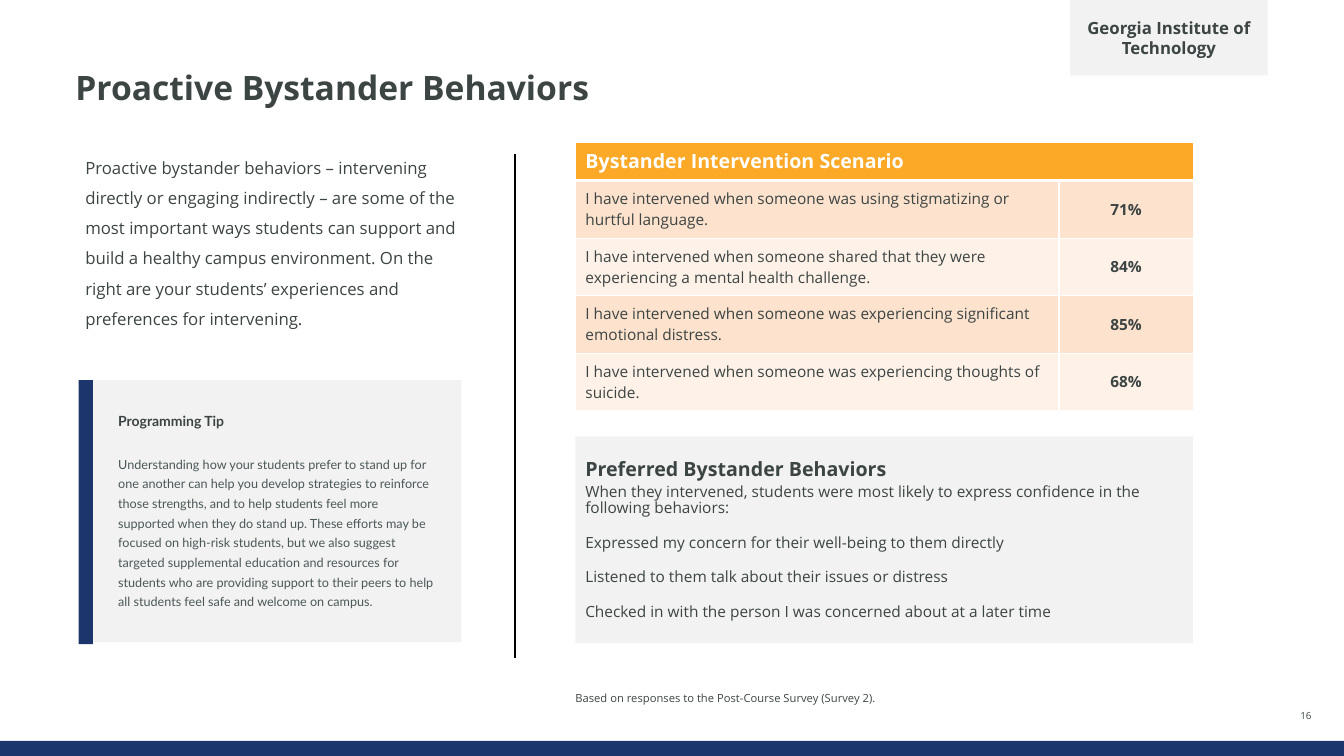
import pptx
import pptx.util
import pptx.dml.color
import pptx.enum.shapes
import pptx.enum.text
from lxml import etree

Cm, Pt = pptx.util.Cm, pptx.util.Pt
ALIGN, ANCHOR = pptx.enum.text.PP_ALIGN, pptx.enum.text.MSO_ANCHOR
COLORS = {"navy": "1C366B", "text": "3C4543", "muted": "4C5758", "panel": "F2F2F2",
          "header": "FBA927", "odd": "FDE2CD", "even": "FEF1E8",
          "white": "FFFFFF", "black": "000000"}
SCENARIOS = [
    ("I have intervened when someone was using stigmatizing or hurtful language.", "71%"),
    ("I have intervened when someone shared that they were experiencing a mental health challenge.", "84%"),
    ("I have intervened when someone was experiencing significant emotional distress.", "85%"),
    ("I have intervened when someone was experiencing thoughts of suicide.", "68%"),
]
BEHAVIORS = [
    "Expressed my concern for their well-being to them directly",
    "Listened to them talk about their issues or distress",
    "Checked in with the person I was concerned about at a later time",
]


def rgb(name):
    return pptx.dml.color.RGBColor.from_string(COLORS[name])


def set_frame(tf, anchor, left=0.25, top=0.0):
    tf.word_wrap = True
    tf.vertical_anchor = anchor
    tf.margin_left = tf.margin_right = Cm(left)
    tf.margin_top = tf.margin_bottom = Cm(top)


def write(p, text, size, color="text", bold=False, font="Open Sans",
          align=ALIGN.LEFT, line=None, before=0, after=0):
    p.text = text
    p.alignment = align
    p.space_before, p.space_after = Pt(before), Pt(after)
    if line:
        p.line_spacing = line
    f = p.runs[0].font
    f.name, f.size, f.bold = font, Pt(size), bold
    f.color.rgb = rgb(color)


def add_rect(s, x, y, w, h, color):
    sp = s.shapes.add_shape(pptx.enum.shapes.MSO_SHAPE.RECTANGLE, Cm(x), Cm(y), Cm(w), Cm(h))
    sp.shadow.inherit = False
    sp.fill.solid()
    sp.fill.fore_color.rgb = rgb(color)
    sp.line.fill.background()
    return sp


def add_text(s, x, y, w, h, text, size, anchor=ANCHOR.TOP, left=0.0, top=0.0, **style):
    tf = s.shapes.add_textbox(Cm(x), Cm(y), Cm(w), Cm(h)).text_frame
    set_frame(tf, anchor, left, top)
    write(tf.paragraphs[0], text, size, **style)


def add_divider(s, x, y, h):
    line = s.shapes.add_connector(pptx.enum.shapes.MSO_CONNECTOR.STRAIGHT,
                                  Cm(x), Cm(y), Cm(x), Cm(y + h))
    line.line.color.rgb = rgb("black")
    line.line.width = Pt(1)
    etree.SubElement(line._element.spPr, pptx.oxml.ns.qn("a:effectLst"))


def add_school_tag(s, x, y, w, h):
    tf = add_rect(s, x, y, w, h, "panel").text_frame
    set_frame(tf, ANCHOR.MIDDLE)
    write(tf.paragraphs[0], "Georgia Institute of Technology", 12, bold=True, align=ALIGN.CENTER)


def add_tip(s, x, y, w, h):
    bar = 0.36
    tf = add_rect(s, x + bar, y, w - bar, h - 0.05, "panel").text_frame
    set_frame(tf, ANCHOR.MIDDLE, 0.64)
    write(tf.paragraphs[0], "Programming Tip", 10, bold=True, font="Lato", line=Pt(12), after=2)
    write(tf.add_paragraph(),
          "Understanding how your students prefer to stand up for one another can help you "
          "develop strategies to reinforce those strengths, and to help students feel more "
          "supported when they do stand up. These efforts may be focused on high-risk students, "
          "but we also suggest targeted supplemental education and resources for students who "
          "are providing support to their peers to help all students feel safe and welcome on "
          "campus.", 9, "muted", font="Lato", line=1.3, before=14, after=2)
    add_rect(s, x, y, bar, h, "navy")


def add_behaviors(s, x, y, w, h):
    tf = add_rect(s, x, y, w, h, "panel").text_frame
    set_frame(tf, ANCHOR.MIDDLE, top=0.13)
    write(tf.paragraphs[0], "Preferred Bystander Behaviors", 14, bold=True, line=0.9, after=3)
    write(tf.add_paragraph(), "When they intervened, students were most likely to express "
          "confidence in the following behaviors:", 11, line=0.88)
    for behavior in BEHAVIORS:
        write(tf.add_paragraph(), behavior, 11, line=0.88, before=13)


def style_cell(cell, fill, bottom=1):
    # Borders come before the fill in the cell properties
    tc_pr = cell._tc.get_or_add_tcPr()
    for side, width in (("L", 1), ("R", 1), ("T", 1), ("B", bottom)):
        ln = etree.SubElement(tc_pr, pptx.oxml.ns.qn("a:ln" + side), w=str(Pt(width)))
        solid = etree.SubElement(ln, pptx.oxml.ns.qn("a:solidFill"))
        etree.SubElement(solid, pptx.oxml.ns.qn("a:srgbClr"), val=COLORS["white"])
    cell.fill.solid()
    cell.fill.fore_color.rgb = rgb(fill)
    cell.vertical_anchor = ANCHOR.MIDDLE


def add_scenarios(s, x, y, w, h):
    head, share = 0.97, 3.38
    rows = len(SCENARIOS) + 1
    table = s.shapes.add_table(rows, 2, Cm(x), Cm(y), Cm(w), Cm(h)).table
    table.columns[0].width, table.columns[1].width = Cm(w - share), Cm(share)
    for i, row in enumerate(table.rows):
        row.height = Cm((h - head) / len(SCENARIOS) if i else head)

    # Header across both columns
    for cell in table.rows[0].cells:
        style_cell(cell, "header", bottom=3)
        cell.margin_top = cell.margin_bottom = 0
    table.cell(0, 0).merge(table.cell(0, 1))
    write(table.cell(0, 0).text_frame.paragraphs[0], "Bystander Intervention Scenario",
          14, "white", bold=True)

    # Scenario and share of students
    for i, values in enumerate(SCENARIOS, 1):
        for j, value in enumerate(values):
            cell = table.cell(i, j)
            style_cell(cell, "odd" if i % 2 else "even")
            write(cell.text_frame.paragraphs[0], value, 11, bold=j == 1,
                  align=ALIGN.CENTER if j else ALIGN.LEFT)


def add_footer(s, x, y, w, h):
    add_rect(s, x, y, w, h, "navy")
    add_text(s, 14.5, y - 1.3, 15.27, 0.38, "Based on responses to the Post-Course Survey (Survey 2).",
             8, ANCHOR.BOTTOM, line=Pt(12), after=2)
    add_text(s, 32.26, y - 0.86, 1.3, 0.38, "16", 7, ANCHOR.BOTTOM, align=ALIGN.CENTER)


def main():
    prs = pptx.Presentation()
    prs.slide_width, prs.slide_height = Cm(33.87), Cm(19.05)
    s = prs.slides.add_slide(prs.slide_layouts[6])

    # Frame of the slide
    add_footer(s, 0, 18.67, 33.87, 0.38)
    add_text(s, 1.9, 1.8, 30.05, 1.78, "Proactive Bystander Behaviors", 24, bold=True, line=0.9)
    add_school_tag(s, 26.97, 0, 4.98, 1.9)
    add_divider(s, 12.98, 3.89, 12.7)

    # Left column
    add_text(s, 1.9, 3.58, 10.29, 4.8,
             "Proactive bystander behaviors – intervening directly or engaging indirectly – are "
             "some of the most important ways students can support and build a healthy campus "
             "environment. On the right are your students’ experiences and preferences for "
             "intervening.", 12, left=0.25, top=0.13, line=1.5, after=2)
    add_tip(s, 1.98, 9.58, 9.65, 6.65)

    # Right column
    add_scenarios(s, 14.5, 3.58, 15.57, 6.77)
    add_behaviors(s, 14.5, 11, 15.57, 5.21)

    prs.save("out.pptx")


if __name__ == "__main__":
    main()
